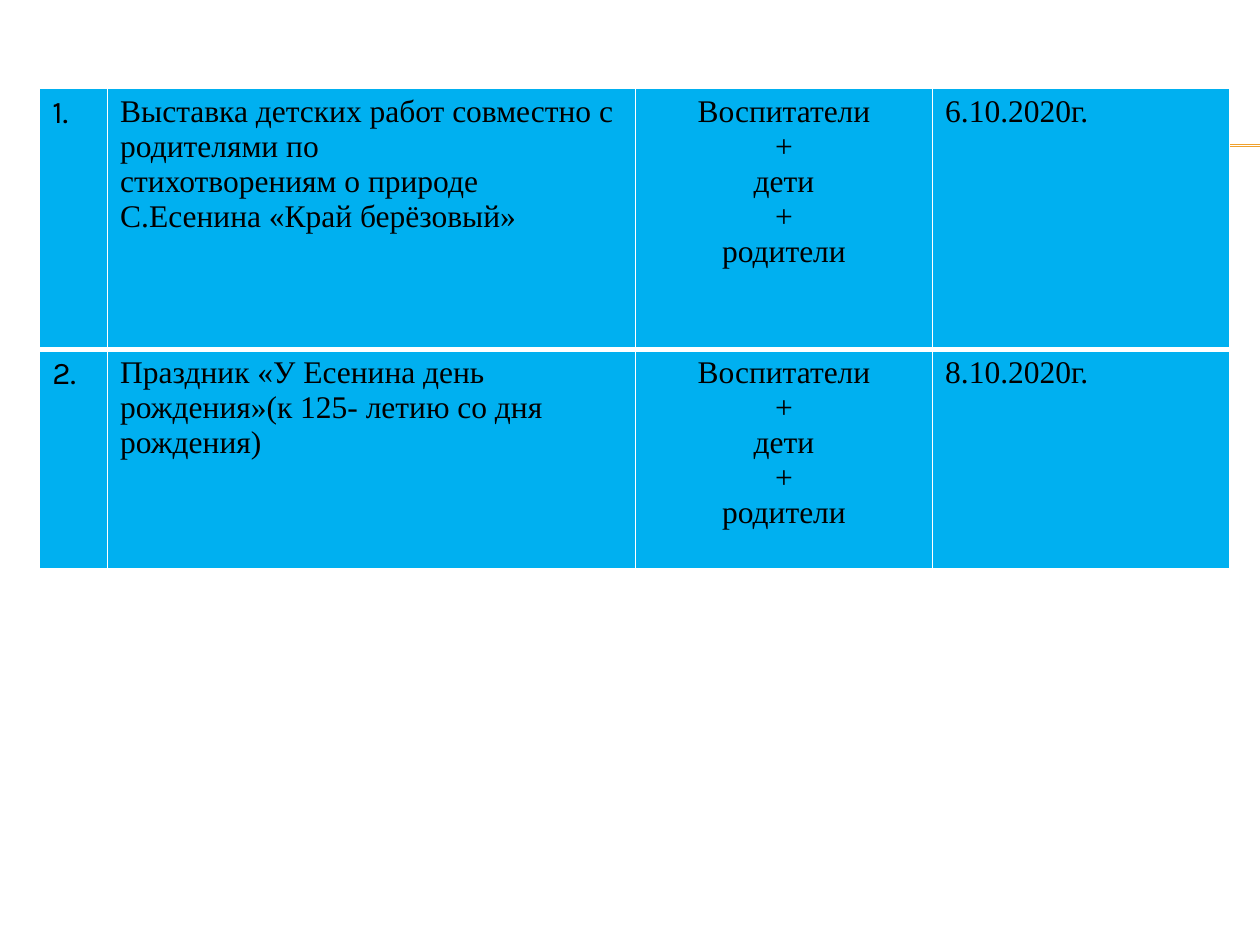
from lxml.etree import SubElement
from pptx import Presentation
from pptx.dml.color import RGBColor
from pptx.enum.shapes import MSO_CONNECTOR
from pptx.enum.text import PP_ALIGN
from pptx.oxml import parse_xml
from pptx.oxml.ns import nsdecls, qn
from pptx.util import Cm, Pt

HUES = {"cell": "00B0F0", "edge": "FFFFFF", "rule": "F0A22E", "text": "000000"}
CREW = ["Воспитатели", "+", "дети", "+", "родители"]
ROWS = [
    (["1."],
     ["Выставка детских работ совместно с родителями по",
      "стихотворениям о природе С.Есенина «Край берёзовый»"],
     CREW, ["6.10.2020г."]),
    (["2."],
     ["Праздник «У Есенина день рождения»(к 125- летию со дня рождения)"],
     CREW, ["8.10.2020г."]),
]
COLS = [
    (1.37, "Karla", PP_ALIGN.LEFT),
    (10.64, "Times New Roman", PP_ALIGN.LEFT),
    (5.99, "Times New Roman", PP_ALIGN.CENTER),
    (5.99, "Times New Roman", PP_ALIGN.LEFT),
]
HIGH = [5.26, 4.42]
RULES = [2.92, 2.95]


def hue(name):
    """Return a named colour."""
    return RGBColor.from_string(HUES[name])


def add_rule(slide, top):
    """Draw one rule running to the right edge."""
    rule = slide.shapes.add_connector(
        MSO_CONNECTOR.STRAIGHT, Cm(1.42), Cm(top), Cm(25.4), Cm(top))
    rule.line.color.rgb = hue("rule")
    rule.line.width = Pt(0.75)
    SubElement(rule._element.spPr, qn("a:effectLst"))


def set_edges(cell, top, base):
    """Set the four borders of a cell."""
    props = cell._tc.get_or_add_tcPr()
    for spot, (side, size) in enumerate(zip("LRTB", (1, 1, top, base))):
        props.insert(spot, parse_xml(
            f'<a:ln{side} {nsdecls("a")} w="{Pt(size)}"><a:solidFill>'
            f'<a:srgbClr val="{HUES["edge"]}"/></a:solidFill></a:ln{side}>'))


def fill_cell(cell, lines, font, align):
    """Colour a cell and write its lines."""
    cell.fill.solid()
    cell.fill.fore_color.rgb = hue("cell")
    frame = cell.text_frame
    for spot, line in enumerate(lines):
        para = frame.add_paragraph() if spot else frame.paragraphs[0]
        para.alignment = align
        run = para.add_run()
        run.text = line
        run.font.name = font
        run.font.size = Pt(18)
        run.font.bold = False
        run.font.color.rgb = hue("text")


def add_plan(slide):
    """Build the table of events."""
    wide = sum(col[0] for col in COLS)
    table = slide.shapes.add_table(
        len(ROWS), len(COLS), Cm(0.8), Cm(1.78), Cm(wide), Cm(sum(HIGH))).table
    table.first_row = True
    table.horz_banding = False
    for col, (size, _, _) in zip(table.columns, COLS):
        col.width = Cm(size)
    for y, (row, size) in enumerate(zip(ROWS, HIGH)):
        table.rows[y].height = Cm(size)
        for x, (lines, (_, font, align)) in enumerate(zip(row, COLS)):
            cell = table.cell(y, x)
            fill_cell(cell, lines, font, align)
            set_edges(cell, 3 if y else 1, 1 if y else 3)


def main():
    """Build and save the slide."""
    deck = Presentation()
    deck.slide_width, deck.slide_height = Cm(25.4), Cm(19.05)
    slide = deck.slides.add_slide(deck.slide_layouts[6])
    for top in RULES:
        add_rule(slide, top)
    add_plan(slide)
    deck.save("out.pptx")


if __name__ == "__main__":
    main()
